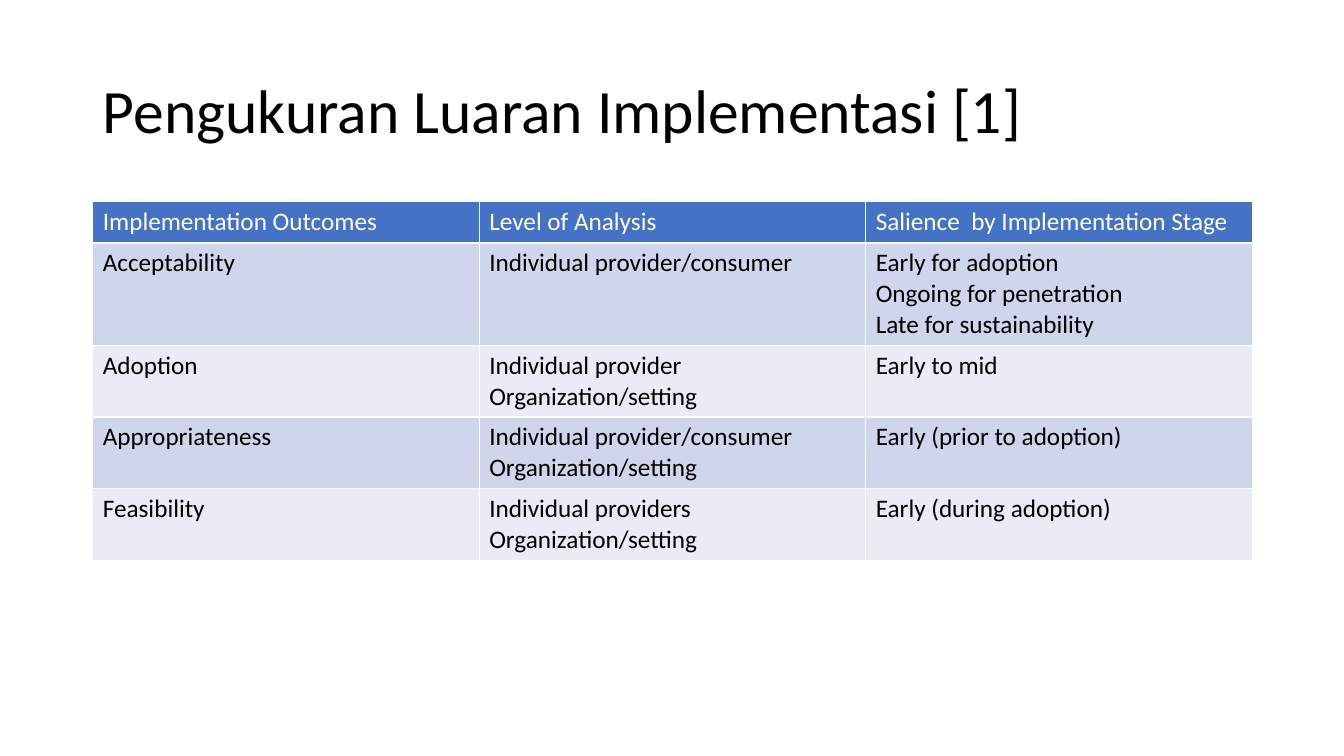
from pptx import Presentation
from pptx.dml.color import RGBColor
from pptx.enum.text import MSO_ANCHOR, PP_ALIGN
from pptx.util import Inches, Pt

LEFT = PP_ALIGN.LEFT
MIDDLE = MSO_ANCHOR.MIDDLE
TITLE_ONLY = 5
FONT = "Calibri"
BLACK, WHITE = "000000", "FFFFFF"
HEADER_FILL = "4472C4"
BAND_FILLS = ("CFD5EA", "E9EBF5")
FIRST_LINE, EXTRA_LINE = 0.41, 0.3

HEADINGS = ("Implementation Outcomes", "Level of Analysis",
            "Salience  by Implementation Stage")
OUTCOMES = (
    ("Acceptability", "Individual provider/consumer",
     "Early for adoption\nOngoing for penetration\nLate for sustainability"),
    ("Adoption", "Individual provider\nOrganization/setting", "Early to mid"),
    ("Appropriateness", "Individual provider/consumer\nOrganization/setting",
     "Early (prior to adoption)"),
    ("Feasibility", "Individual providers\nOrganization/setting",
     "Early (during adoption)"),
)


def rgb(color):
    return RGBColor.from_string(color)


def format_text(frame, color, **font_values):
    for paragraph in frame.paragraphs:
        paragraph.alignment = LEFT
        paragraph.font.color.rgb = rgb(color)
        for attribute, value in font_values.items():
            setattr(paragraph.font, attribute, value)


def place_title(slide, text, left, top, width, height):
    title = slide.shapes.title
    box = {"left": left, "top": top, "width": width, "height": height}
    for attribute, value in box.items():
        setattr(title, attribute, Inches(value))
    frame = title.text_frame
    frame.text = text
    frame.vertical_anchor = MIDDLE
    frame.paragraphs[0].line_spacing = 0.9
    format_text(frame, BLACK, name=FONT, size=Pt(44))


def row_height(texts):
    extra_lines = max(text.count("\n") for text in texts)
    return FIRST_LINE + EXTRA_LINE * extra_lines


def place_outcome_table(slide, left, top, width):
    rows = (HEADINGS, *OUTCOMES)
    heights = [row_height(texts) for texts in rows]
    table = slide.shapes.add_table(
        len(rows), len(HEADINGS), Inches(left), Inches(top),
        Inches(width), Inches(sum(heights))).table
    for index, (texts, height) in enumerate(zip(rows, heights)):
        table.rows[index].height = Inches(height)
        is_header = index == 0
        fill = HEADER_FILL if is_header else BAND_FILLS[(index - 1) % 2]
        for column, text in enumerate(texts):
            cell = table.cell(index, column)
            cell.text = text
            cell.fill.solid()
            cell.fill.fore_color.rgb = rgb(fill)
            format_text(cell.text_frame, WHITE if is_header else BLACK,
                        name=FONT, size=Pt(18), bold=False)


def main():
    presentation = Presentation()
    presentation.slide_width = Inches(13.33)
    presentation.slide_height = Inches(7.5)
    slide = presentation.slides.add_slide(
        presentation.slide_layouts[TITLE_ONLY])
    place_title(slide, "Pengukuran Luaran Implementasi [1]",
                0.92, 0.4, 11.5, 1.45)
    place_outcome_table(slide, 0.92, 2, 11.5)
    presentation.save("out.pptx")


if __name__ == "__main__":
    main()
